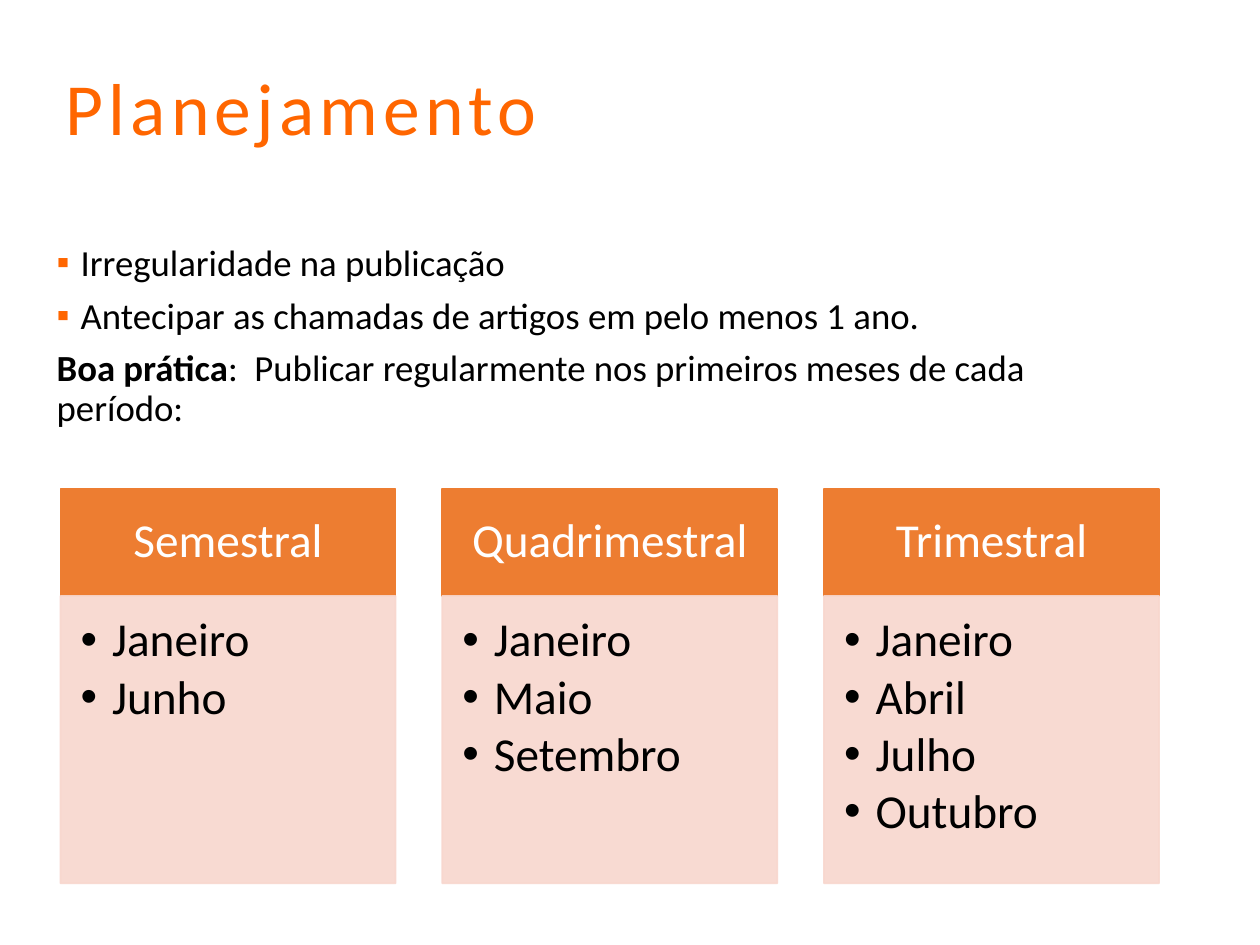
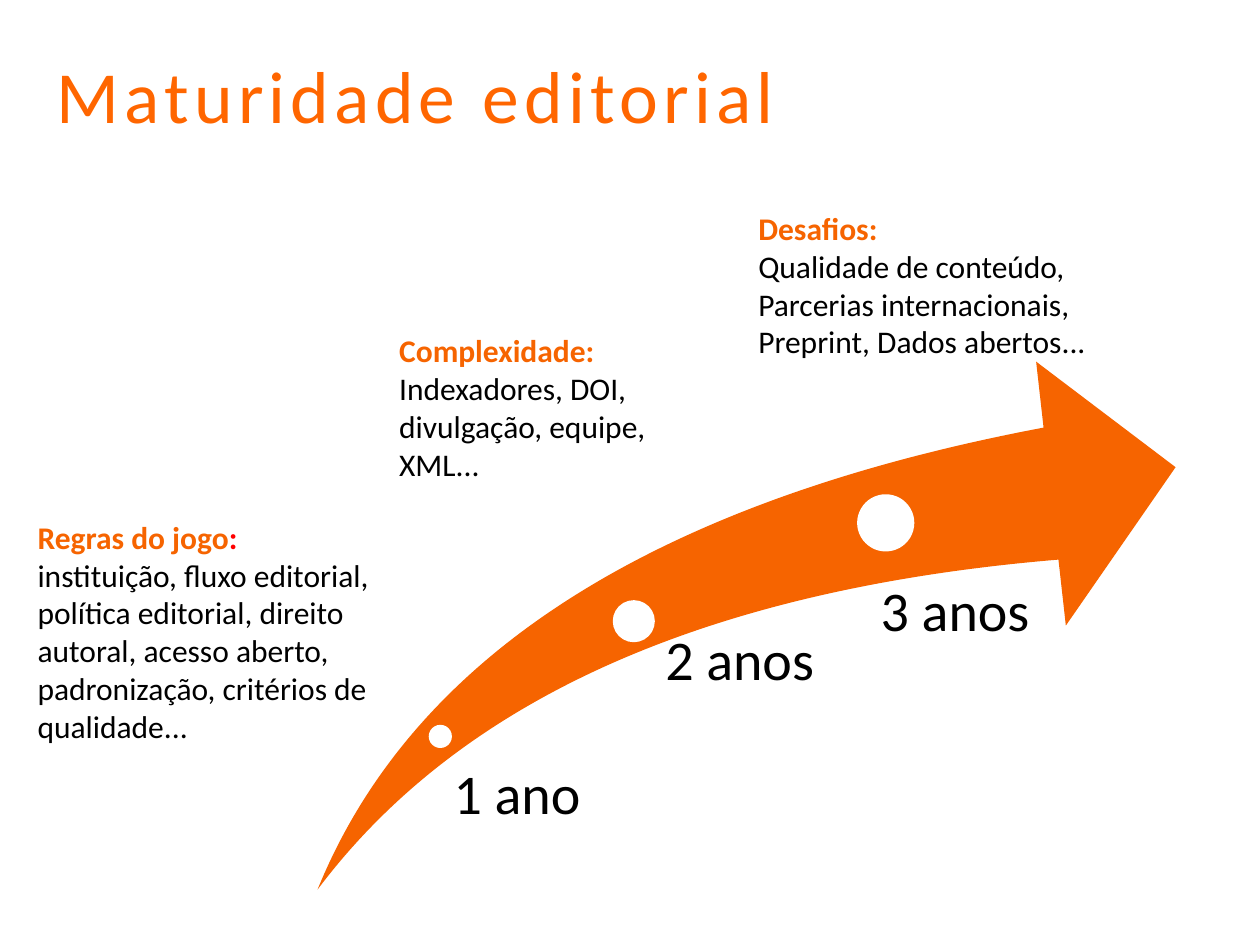
"""Build two slides on planning and editorial maturity of a journal."""
from dataclasses import dataclass

from lxml import etree
from pptx import Presentation
from pptx.dml.color import RGBColor
from pptx.enum.shapes import MSO_SHAPE
from pptx.enum.text import MSO_ANCHOR, MSO_AUTO_SIZE, PP_ALIGN
from pptx.oxml.ns import qn
from pptx.util import Emu, Pt

RECT, OVAL, SWOOSH = MSO_SHAPE.RECTANGLE, MSO_SHAPE.OVAL, MSO_SHAPE.SWOOSH_ARROW
TOP, MIDDLE = MSO_ANCHOR.TOP, MSO_ANCHOR.MIDDLE
LEFT, CENTER = PP_ALIGN.LEFT, PP_ALIGN.CENTER
NO_FIT = MSO_AUTO_SIZE.NONE

TITLE_ORANGE = RGBColor(0xFF, 0x66, 0x00)
ARROW_ORANGE = RGBColor(0xF6, 0x64, 0x00)
HEADER_ORANGE = RGBColor(0xED, 0x7D, 0x31)
PALE_ORANGE = RGBColor(0xF8, 0xD7, 0xCE)
RED = RGBColor(0xFF, 0x00, 0x00)
BLACK = RGBColor(0x00, 0x00, 0x00)
WHITE = RGBColor(0xFF, 0xFF, 0xFF)

FONT = "Calibri"
EMU_PER_PX = 9144
TITLE_LAYOUT, CONTENT_LAYOUT = 5, 1
COLUMN_LEFT, COLUMN_PITCH, COLUMN_WIDTH = 48, 303, 266
HEADER_TOP, HEADER_HEIGHT, LIST_HEIGHT = 388, 85, 228


@dataclass(frozen=True)
class Box:
    left: int
    top: int
    width: int
    height: int


@dataclass(frozen=True)
class Run:
    text: str
    color: RGBColor = BLACK
    bold: bool = False


@dataclass(frozen=True)
class Style:
    size: int
    align: PP_ALIGN = LEFT
    line: float = 0.9
    before: float = 0
    after: float = 0
    bullet: str = ""
    bullet_color: RGBColor = BLACK
    indent: int = 0
    tracking: int = 0


@dataclass(frozen=True)
class Column:
    period: str
    months: tuple[str, ...]


@dataclass(frozen=True)
class Milestone:
    dot: Box
    label: str
    label_box: Box
    inset: int


@dataclass(frozen=True)
class Note:
    box: Box
    paragraphs: tuple[tuple[Run, ...], ...]


TITLE = Style(42, tracking=300)
PLAIN = Style(21, before=7.5)
BULLET = Style(21, before=7.5, bullet="▪", bullet_color=TITLE_ORANGE, indent=19)
HEADER = Style(27, align=CENTER)
MONTH = Style(27, after=3.5, bullet="•", indent=25)
YEARS = Style(32)
NOTE = Style(18, line=1.0)

COLUMNS = (
    Column("Semestral", ("Janeiro", "Junho")),
    Column("Quadrimestral", ("Janeiro", "Maio", "Setembro")),
    Column("Trimestral", ("Janeiro", "Abril", "Julho", "Outubro")),
)
MILESTONES = (
    Milestone(Box(341, 576, 17, 17), "1 ano", Box(351, 608, 132, 70), 9),
    Milestone(Box(487, 477, 32, 32), "2 anos", Box(511, 502, 161, 204), 17),
    Milestone(Box(681, 393, 44, 44), "3 anos", Box(676, 463, 161, 213), 23),
)
NOTES = (
    Note(Box(20, 406, 287, 192), ((
        Run("Regras do jogo", ARROW_ORANGE, True),
        Run(": ", RED, True),
        Run("instituição, fluxo editorial, política editorial, direito autoral, "
            "acesso aberto, padronização, critérios de qualidade..."),
    ),)),
    Note(Box(307, 258, 244, 131), ((
        Run("Complexidade: ", ARROW_ORANGE, True),
        Run("Indexadores, DOI, divulgação, equipe, XML..."),
    ),)),
    Note(Box(592, 161, 326, 131), (
        (Run("Desafios:", ARROW_ORANGE, True),),
        (Run("Qualidade de conteúdo,"),),
        (Run("Parcerias internacionais, Preprint, Dados abertos..."),),
    )),
)


def px(value: int) -> Emu:
    """Turn px into EMU."""
    return Emu(value * EMU_PER_PX)


def edges(box: Box) -> tuple[Emu, Emu, Emu, Emu]:
    """Give the left, top, width and height of a box in EMU."""
    return px(box.left), px(box.top), px(box.width), px(box.height)


def setup_frame(tf, anchor=TOP, insets=(10, 5, 10, 5)) -> None:
    """Set wrapping, anchor and insets of a text frame."""
    tf.word_wrap = True
    tf.auto_size = NO_FIT
    tf.vertical_anchor = anchor
    tf.margin_left, tf.margin_top, tf.margin_right, tf.margin_bottom = map(px, insets)


def set_bullet(p, style: Style) -> None:
    """Give a paragraph its hanging bullet, or none."""
    pPr = p._p.get_or_add_pPr()
    pPr.set("marL", str(px(style.indent)))
    pPr.set("indent", str(px(-style.indent)))
    if not style.bullet:
        etree.SubElement(pPr, qn("a:buNone"))
        return
    color = etree.SubElement(pPr, qn("a:buClr"))
    etree.SubElement(color, qn("a:srgbClr"), val=str(style.bullet_color))
    etree.SubElement(pPr, qn("a:buFont"), typeface="Arial")
    etree.SubElement(pPr, qn("a:buChar"), char=style.bullet)


def write(tf, runs: tuple[Run, ...], style: Style, first: bool = True) -> None:
    """Write one paragraph, run by run."""
    p = tf.paragraphs[0] if first else tf.add_paragraph()
    p.alignment = style.align
    p.line_spacing = style.line
    p.space_before, p.space_after = Pt(style.before), Pt(style.after)
    set_bullet(p, style)
    for run in runs:
        r = p.add_run()
        r.text = run.text
        r.font.name, r.font.size = FONT, Pt(style.size)
        r.font.bold, r.font.color.rgb = run.bold, run.color
        if style.tracking:
            r.font._element.set("spc", str(style.tracking))


def place(sp, box: Box) -> None:
    """Move a placeholder to a box."""
    sp.left, sp.top, sp.width, sp.height = edges(box)


def add_title(slide, text: str, box: Box) -> None:
    """Fill the title placeholder."""
    sp = slide.shapes.title
    place(sp, box)
    setup_frame(sp.text_frame, MIDDLE)
    write(sp.text_frame, (Run(text, TITLE_ORANGE),), TITLE)


def add_filled(slide, kind: MSO_SHAPE, box: Box, color: RGBColor,
               outlined: bool = True, alpha: int = 100):
    """Add a preset shape in one colour, with an optional matching outline."""
    sp = slide.shapes.add_shape(kind, *edges(box))
    sp.shadow.inherit = False
    sp.fill.solid()
    sp.fill.fore_color.rgb = color
    if outlined:
        sp.line.color.rgb = color
        sp.line.width = Pt(1)
    else:
        sp.line.fill.background()
    if alpha < 100:
        for node in sp._element.spPr.iter(qn("a:srgbClr")):
            etree.SubElement(node, qn("a:alpha"), val=str(alpha * 1000))
    return sp


def add_text(slide, box: Box, insets=(10, 5, 10, 5)):
    """Add a text box and return its text frame."""
    tf = slide.shapes.add_textbox(*edges(box)).text_frame
    setup_frame(tf, insets=insets)
    return tf


def add_column(slide, index: int, column: Column) -> None:
    """Draw a period header above its list of months."""
    left = COLUMN_LEFT + index * COLUMN_PITCH
    header_box = Box(left, HEADER_TOP, COLUMN_WIDTH, HEADER_HEIGHT)
    list_box = Box(left, HEADER_TOP + HEADER_HEIGHT, COLUMN_WIDTH, LIST_HEIGHT)
    tf = add_filled(slide, RECT, header_box, HEADER_ORANGE).text_frame
    setup_frame(tf, MIDDLE, (21, 12, 21, 12))
    write(tf, (Run(column.period, WHITE),), HEADER)
    tf = add_filled(slide, RECT, list_box, PALE_ORANGE, alpha=90).text_frame
    setup_frame(tf, insets=(16, 16, 21, 24))
    for i, month in enumerate(column.months):
        write(tf, (Run(month),), MONTH, i == 0)


def build_planning(prs) -> None:
    """Build the planning slide."""
    slide = prs.slides.add_slide(prs.slide_layouts[CONTENT_LAYOUT])
    add_title(slide, "Planejamento", Box(42, 1, 850, 176))
    for i, column in enumerate(COLUMNS):
        add_column(slide, i, column)
    body = slide.placeholders[1]
    place(body, Box(35, 189, 862, 180))
    tf = body.text_frame
    setup_frame(tf)
    write(tf, (Run("Irregularidade na publicação"),), BULLET)
    write(tf, (Run("Antecipar as chamadas de artigos em pelo menos 1 ano."),), BULLET, False)
    write(tf, (
        Run("Boa prática", bold=True),
        Run(":  Publicar regularmente nos primeiros meses de cada período:"),
    ), PLAIN, False)


def build_maturity(prs) -> None:
    """Build the editorial maturity slide."""
    slide = prs.slides.add_slide(prs.slide_layouts[TITLE_LAYOUT])
    add_title(slide, "Maturidade editorial", Box(35, 45, 818, 68))
    arrow = add_filled(slide, SWOOSH, Box(252, 287, 681, 419), ARROW_ORANGE, False)
    arrow.adjustments[0] = arrow.adjustments[1] = 0.25
    for stone in MILESTONES:
        add_filled(slide, OVAL, stone.dot, WHITE)
        tf = add_text(slide, stone.label_box, (stone.inset, 0, 0, 0))
        write(tf, (Run(stone.label),), YEARS)
    for note in NOTES:
        tf = add_text(slide, note.box)
        for i, runs in enumerate(note.paragraphs):
            write(tf, runs, NOTE, i == 0)


def main() -> None:
    """Build and save the presentation."""
    prs = Presentation()
    prs.slide_width, prs.slide_height = px(1000), px(750)
    build_planning(prs)
    build_maturity(prs)
    prs.save("out.pptx")


if __name__ == "__main__":
    main()
